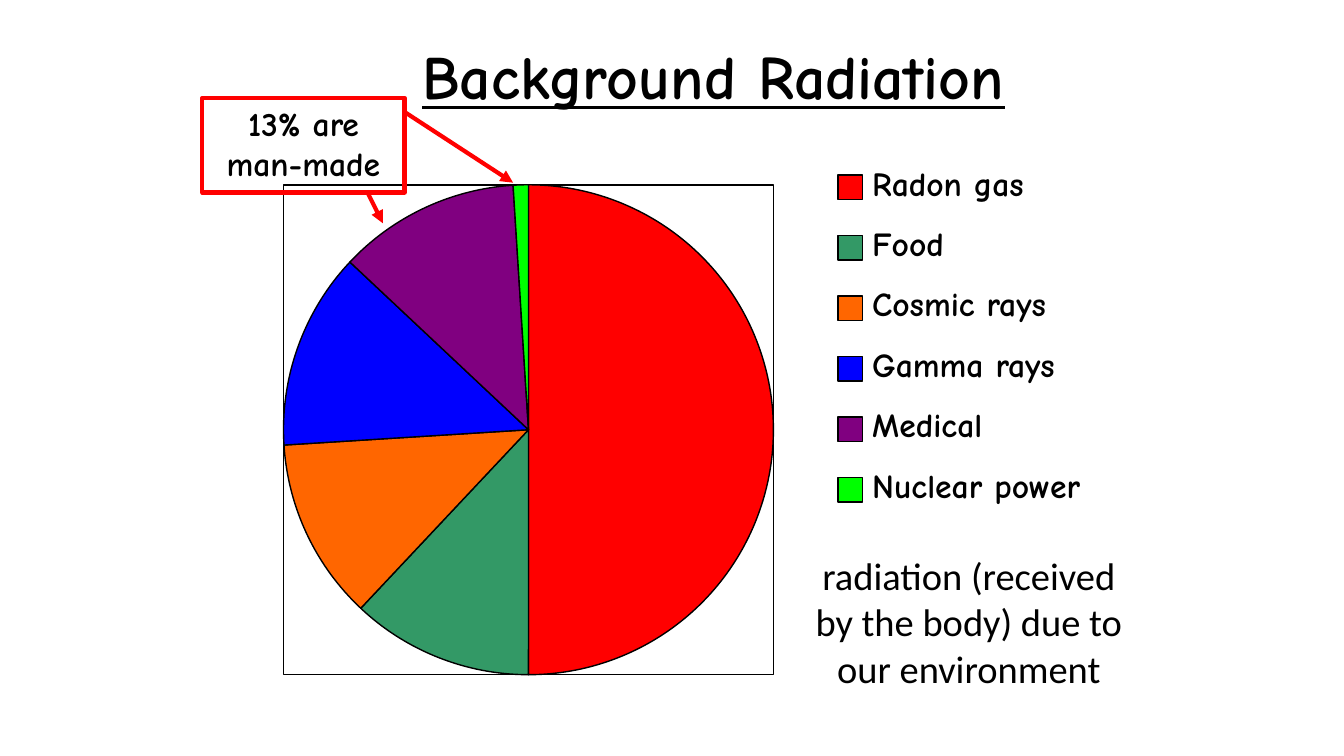
from lxml import etree
from pptx import Presentation
from pptx.chart.data import CategoryChartData
from pptx.dml.color import RGBColor
from pptx.enum import chart as charts, shapes, text
from pptx.oxml import parse_xml
from pptx.oxml.ns import nsdecls, qn
from pptx.util import Pt

BLACK = RGBColor(0x00, 0x00, 0x00)
RED = RGBColor(0xFF, 0x00, 0x00)
GREEN = RGBColor(0x33, 0x99, 0x66)
ORANGE = RGBColor(0xFF, 0x66, 0x00)
BLUE = RGBColor(0x00, 0x00, 0xFF)
PURPLE = RGBColor(0x80, 0x00, 0x80)
LIME = RGBColor(0x00, 0xFF, 0x00)

HAND_FONT = "Comic Neue"
BODY_FONT = "Calibri"

# Source of radiation, share in percent, colour
SOURCES = [
    ("Radon gas", 50, RED),
    ("Food", 12, GREEN),
    ("Cosmic rays", 12, ORANGE),
    ("Gamma rays", 13, BLUE),
    ("Medical", 12, PURPLE),
    ("Nuclear power", 1, LIME),
]


def write_text(shape, words, size=24, font=HAND_FONT, bold=True, underline=False,
               align=text.PP_ALIGN.LEFT, anchor=text.MSO_ANCHOR.TOP,
               line_spacing=None, wrap=True, inset=None):
    frame = shape.text_frame
    frame.word_wrap = wrap
    frame.vertical_anchor = anchor
    if inset is not None:
        frame.margin_left = frame.margin_right = Pt(inset)
        frame.margin_top = frame.margin_bottom = Pt(inset)
    paragraph = frame.paragraphs[0]
    paragraph.alignment = align
    if line_spacing:
        paragraph.line_spacing = line_spacing
    run = paragraph.add_run()
    run.text = words
    run.font.name = font
    run.font.size = Pt(size)
    run.font.bold = bold
    run.font.underline = underline
    run.font.color.rgb = BLACK


def add_text(slide, box, words, **text_format):
    write_text(slide.shapes.add_textbox(*map(Pt, box)), words, **text_format)


def add_rectangle(slide, box, fill=None, line=BLACK, width=1):
    rectangle = slide.shapes.add_shape(shapes.MSO_SHAPE.RECTANGLE, *map(Pt, box))
    rectangle.shadow.inherit = False
    if fill is None:
        rectangle.fill.background()
    else:
        rectangle.fill.solid()
        rectangle.fill.fore_color.rgb = fill
    rectangle.line.color.rgb = line
    rectangle.line.width = Pt(width)
    return rectangle


def add_arrow(slide, start, end):
    arrow = slide.shapes.add_connector(
        shapes.MSO_CONNECTOR.STRAIGHT, *map(Pt, start + end))
    arrow.line.color.rgb = RED
    arrow.line.width = Pt(3)
    etree.SubElement(arrow.line._get_or_add_ln(), qn("a:tailEnd"), type="triangle")
    etree.SubElement(arrow._element.spPr, qn("a:effectLst"))


def add_pie(slide, box):
    """Draw the framed pie so that its circle fills the box."""
    left, top, side, _ = box
    add_rectangle(slide, box)

    data = CategoryChartData()
    data.categories = [name for name, _, _ in SOURCES]
    data.add_series("Share of radiation (%)", [share for _, share, _ in SOURCES])
    margin = 6
    outer = side + 2 * margin
    chart = slide.shapes.add_chart(
        charts.XL_CHART_TYPE.PIE, Pt(left - margin), Pt(top - margin),
        Pt(outer), Pt(outer), data).chart
    chart.has_legend = False
    chart.has_title = False
    chart.font.name = HAND_FONT
    chart.font.size = Pt(24)
    chart.font.color.rgb = BLACK

    plot = chart.plots[0]
    plot.vary_by_categories = True
    for index, (_, _, colour) in enumerate(SOURCES):
        slice_format = plot.series[0].points[index].format
        slice_format.fill.solid()
        slice_format.fill.fore_color.rgb = colour
        slice_format.line.color.rgb = BLACK
        slice_format.line.width = Pt(1)

    offset, extent = margin / outer, side / outer
    layout = parse_xml(
        f'<c:layout {nsdecls("c")}><c:manualLayout><c:layoutTarget val="inner"/>'
        '<c:xMode val="edge"/><c:yMode val="edge"/>'
        f'<c:x val="{offset:.4f}"/><c:y val="{offset:.4f}"/>'
        f'<c:w val="{extent:.4f}"/><c:h val="{extent:.4f}"/>'
        '</c:manualLayout></c:layout>')
    plot_area = chart._chartSpace.chart.plotArea
    for default_layout in plot_area.findall(qn("c:layout")):
        plot_area.remove(default_layout)
    plot_area.insert(0, layout)


def add_legend(slide, box):
    left, top, width, height = box
    pitch = height / len(SOURCES)
    key_side, text_indent = 17.5, 24.5
    for row, (name, _, colour) in enumerate(SOURCES):
        row_top = top + row * pitch
        add_rectangle(slide, (left, row_top + 9, key_side, key_side), fill=colour)
        add_text(slide, (left + text_indent, row_top, width - text_indent, 29),
                 name, wrap=False, inset=0)


def add_callout(slide, box):
    left, top, width, height = box
    callout = add_rectangle(slide, box, line=RED, width=3)
    write_text(callout, "13% are man-made", align=text.PP_ALIGN.CENTER)
    add_arrow(slide, (left + 118, top + height), (left + 129, top + 89.5))
    add_arrow(slide, (left + width, top + 10), (left + 222, top + 60.5))


def build_radiation_slide(presentation):
    slide = presentation.slides.add_slide(presentation.slide_layouts[6])
    add_text(slide, (294.5, 12, 495.5, 90), "Background Radiation", size=44,
             underline=True, anchor=text.MSO_ANCHOR.MIDDLE, line_spacing=0.9)
    add_pie(slide, (202.5, 132, 350, 350))
    add_legend(slide, (598.5, 116, 192, 259.2))
    add_callout(slide, (144.5, 70, 144.5, 67.5))
    add_text(slide, (571, 391.5, 242, 105),
             "radiation (received by the body) due to our environment",
             size=27.5, font=BODY_FONT, bold=False,
             align=text.PP_ALIGN.CENTER, anchor=text.MSO_ANCHOR.MIDDLE)


def main():
    presentation = Presentation()
    presentation.slide_width = Pt(960)
    presentation.slide_height = Pt(540)
    build_radiation_slide(presentation)
    presentation.save("out.pptx")


if __name__ == "__main__":
    main()
